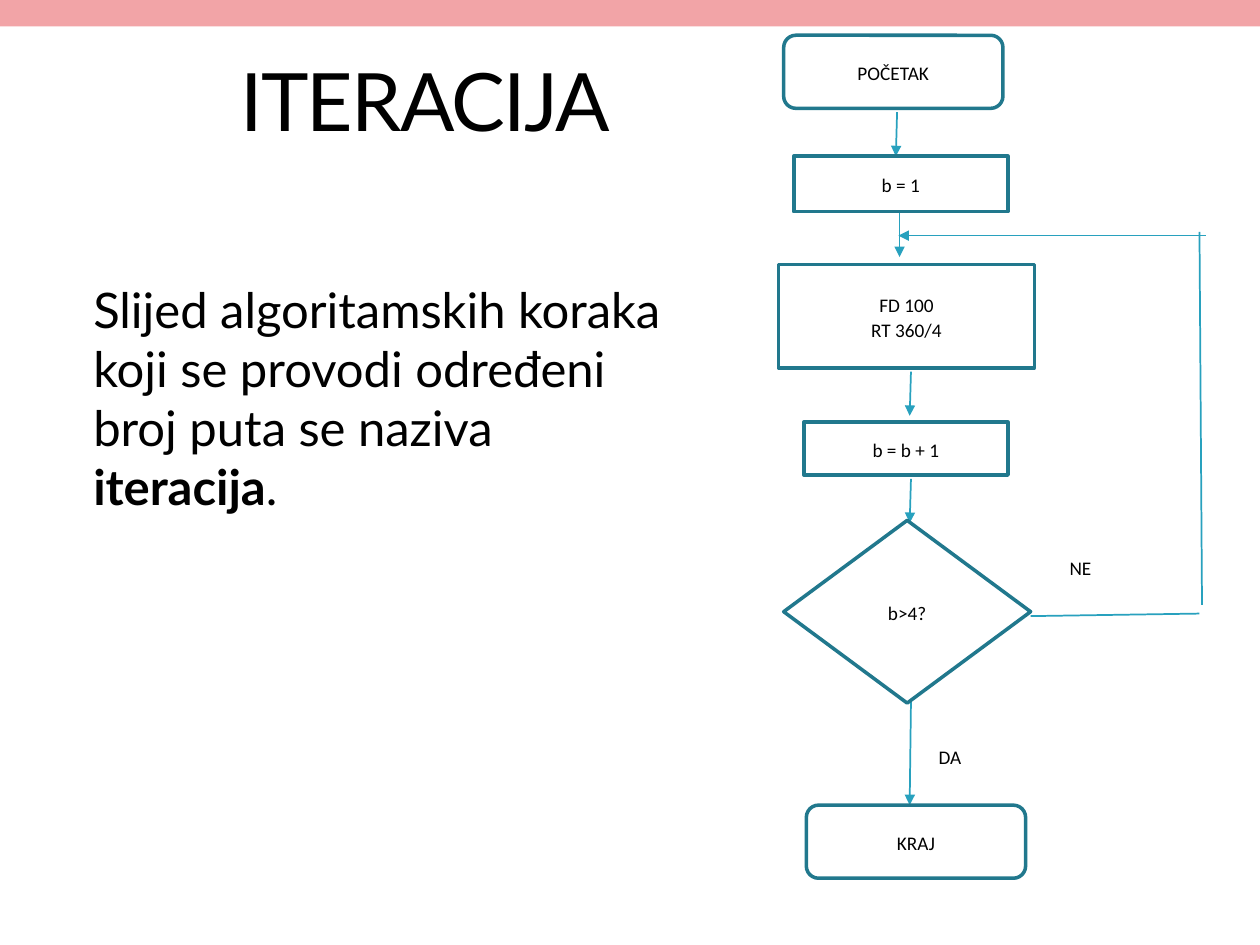
import pptx
import pptx.util
import pptx.dml.color
import pptx.enum.shapes
import pptx.enum.text
import pptx.oxml.ns
import lxml.etree

Inches = pptx.util.Inches
Pt = pptx.util.Pt
RGBColor = pptx.dml.color.RGBColor
SHAPE = pptx.enum.shapes.MSO_SHAPE
ALIGN = pptx.enum.text.PP_ALIGN
ANCHOR = pptx.enum.text.MSO_ANCHOR
qn = pptx.oxml.ns.qn

BLACK = RGBColor(0x00, 0x00, 0x00)
WHITE = RGBColor(0xFF, 0xFF, 0xFF)
PINK = RGBColor(0xF2, 0xA4, 0xA7)
BORDER = RGBColor(0x21, 0x78, 0x8D)
ARROW = RGBColor(0x28, 0xA1, 0xBE)

NODES = [
    (SHAPE.ROUNDED_RECTANGLE, 6.22, 0.28, 1.74, 0.58, ["POČETAK"]),
    (SHAPE.RECTANGLE, 6.3, 1.24, 1.7, 0.44, ["b = 1"]),
    (SHAPE.RECTANGLE, 6.18, 2.1, 2.03, 0.82, ["FD 100", "RT 360/4"]),
    (SHAPE.RECTANGLE, 6.38, 3.35, 1.62, 0.42, ["b = b + 1"]),
    (SHAPE.DIAMOND, 6.22, 4.13, 1.96, 1.45, ["b>4?"]),
    (SHAPE.ROUNDED_RECTANGLE, 6.4, 6.39, 1.74, 0.58, ["KRAJ"]),
]
LINES = [
    (7.12, 0.89, 7.11, 1.24, True),
    (7.14, 1.69, 7.14, 2.04, True),
    (7.23, 2.95, 7.22, 3.3, True),
    (7.23, 3.8, 7.22, 4.15, True),
    (7.23, 5.57, 7.22, 6.39, True),
    (8.18, 4.89, 9.52, 4.87, False),
    (9.54, 4.8, 9.52, 1.84, False),
    (9.57, 1.87, 7.13, 1.87, True),
]
LABELS = [(7.35, 5.85, "DA"), (8.39, 4.35, "NE")]


def set_font(paragraph, name, size):
    paragraph.font.name = name
    paragraph.font.size = Pt(size)
    paragraph.font.color.rgb = BLACK


def place(shape, left, top, width, height):
    shape.left, shape.top = Inches(left), Inches(top)
    shape.width, shape.height = Inches(width), Inches(height)


def add_box(shapes, kind, left, top, width, height, fill=None, border=None):
    shape = shapes.add_shape(
        kind, Inches(left), Inches(top), Inches(width), Inches(height))
    shape.shadow.inherit = False
    if fill is None:
        shape.fill.background()
    else:
        shape.fill.solid()
        shape.fill.fore_color.rgb = fill
    if border is None:
        shape.line.fill.background()
    else:
        shape.line.color.rgb = border
        shape.line.width = Pt(2)
    return shape


def write_lines(shape, lines, alignment, anchor):
    frame = shape.text_frame
    frame.word_wrap = True
    frame.vertical_anchor = anchor
    frame.text = "\n".join(lines)
    for paragraph in frame.paragraphs:
        paragraph.alignment = alignment
        paragraph.line_spacing = 1.07
        paragraph.space_after = Pt(8 if len(lines) == 1 else 0)
        set_font(paragraph, "Calibri", 11)


def add_line(shapes, start_x, start_y, end_x, end_y, has_arrowhead):
    connector = shapes.add_connector(
        pptx.enum.shapes.MSO_CONNECTOR.STRAIGHT,
        Inches(start_x), Inches(start_y), Inches(end_x), Inches(end_y))
    connector.line.color.rgb = ARROW
    connector.line.width = Pt(1)
    if has_arrowhead:
        outline = connector.line._get_or_add_ln()
        lxml.etree.SubElement(outline, qn("a:tailEnd"), type="triangle")
    lxml.etree.SubElement(connector._element.spPr, qn("a:effectLst"))


def fill_title(title):
    place(title, 0.99, 0.36, 4.77, 0.86)
    frame = title.text_frame
    frame.text = "ITERACIJA"
    frame.auto_size = pptx.enum.text.MSO_AUTO_SIZE.NONE
    frame.vertical_anchor = ANCHOR.MIDDLE
    paragraph = frame.paragraphs[0]
    paragraph.alignment = ALIGN.CENTER
    set_font(paragraph, "Lato", 46)
    paragraph.runs[0]._r.get_or_add_rPr().set("spc", "-100")


def fill_body(body):
    place(body, 0.52, 2.17, 4.99, 4.81)
    frame = body.text_frame
    frame.auto_size = pptx.enum.text.MSO_AUTO_SIZE.NONE
    paragraph = frame.paragraphs[0]
    properties = paragraph._p.get_or_add_pPr()
    properties.set("marL", str(Inches(0.12)))
    properties.set("indent", "0")
    lxml.etree.SubElement(properties, qn("a:buNone"))
    paragraph.space_before = Pt(5.6)
    set_font(paragraph, "Lato", 28)
    paragraph.add_run().text = (
        "Slijed algoritamskih koraka koji se provodi određeni "
        "broj puta se naziva ")
    term = paragraph.add_run()
    term.text = "iteracija"
    term.font.bold = True
    paragraph.add_run().text = "."


def add_flowchart(slide):
    shapes = slide.shapes.add_group_shape().shapes
    for line in LINES:
        add_line(shapes, *line)
    for kind, left, top, width, height, lines in NODES:
        node = add_box(shapes, kind, left, top, width, height, border=BORDER)
        write_lines(node, lines, ALIGN.CENTER, ANCHOR.MIDDLE)
    for left, top, text in LABELS:
        label = add_box(
            shapes, SHAPE.RECTANGLE, left, top, 0.79, 0.45, fill=WHITE)
        write_lines(label, [text], ALIGN.LEFT, ANCHOR.TOP)


def main():
    presentation = pptx.Presentation()
    presentation.slide_width = Inches(10)
    presentation.slide_height = Inches(7.5)
    slide = presentation.slides.add_slide(presentation.slide_layouts[1])
    add_box(slide.shapes, SHAPE.RECTANGLE, 0, 0, 10, 0.21, fill=PINK)
    fill_title(slide.shapes.title)
    fill_body(slide.placeholders[1])
    add_flowchart(slide)
    presentation.save("out.pptx")


if __name__ == "__main__":
    main()
